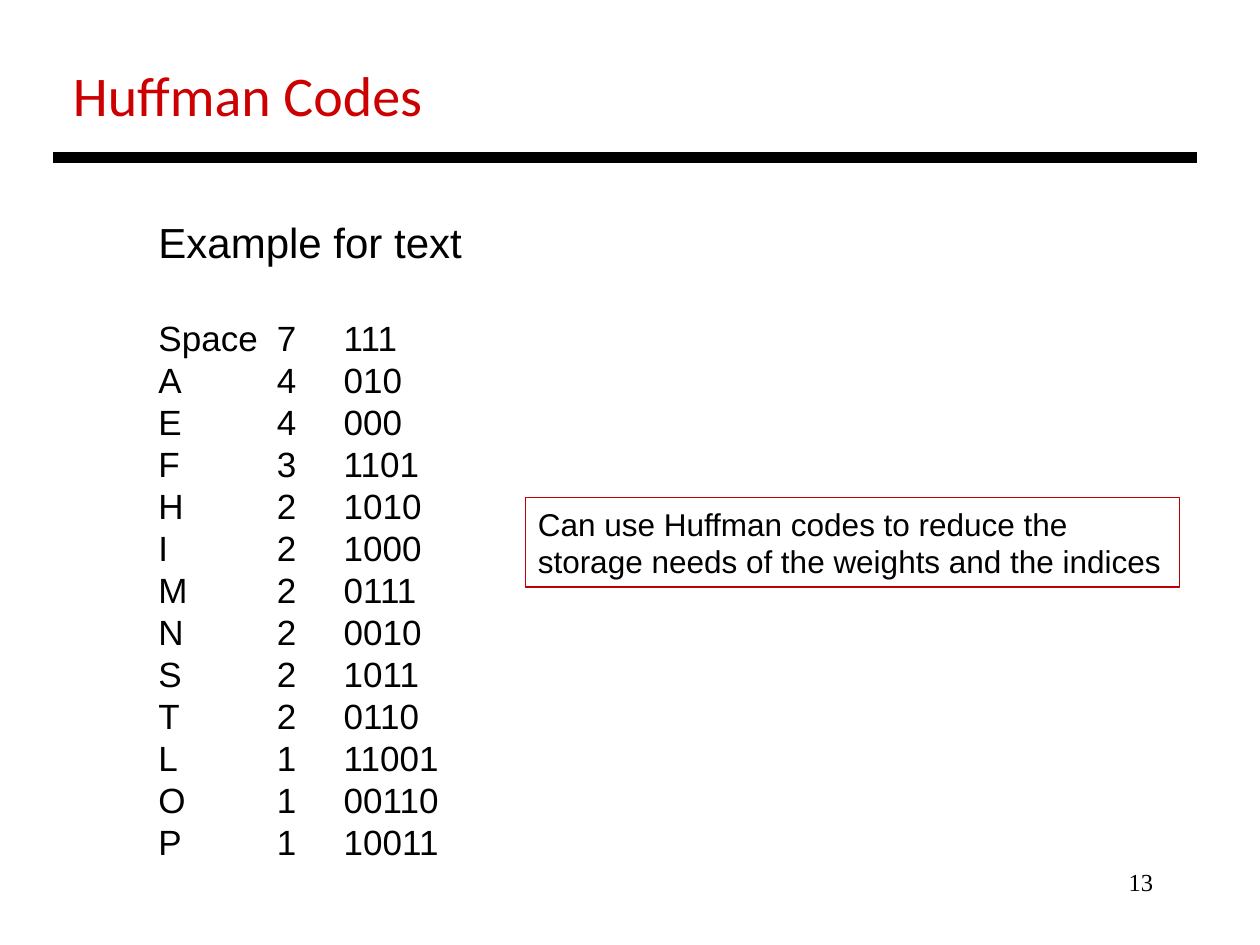
from lxml.etree import SubElement
from pptx import Presentation
from pptx.dml.color import RGBColor
from pptx.enum.shapes import MSO_CONNECTOR as Line, MSO_SHAPE as Shape
from pptx.enum.text import PP_ALIGN as Align
from pptx.oxml.ns import qn
from pptx.util import Inches, Pt

BLACK = RGBColor(0, 0, 0)
RED = RGBColor(0xCC, 0, 0)
DARK_RED = RGBColor(0xC0, 0, 0)

CODES = [
    ("Space", 7, "111"),
    ("A", 4, "010"),
    ("E", 4, "000"),
    ("F", 3, "1101"),
    ("H", 2, "1010"),
    ("I", 2, "1000"),
    ("M", 2, "0111"),
    ("N", 2, "0010"),
    ("S", 2, "1011"),
    ("T", 2, "0110"),
    ("L", 1, "11001"),
    ("O", 1, "00110"),
    ("P", 1, "10011"),
]
STOPS = (0.94, 1.47)


def style(para, text, size, face="Arial", color=BLACK):
    para.text = text
    para.font.size = Pt(size)
    para.font.name = face
    para.font.color.rgb = color


def add_box(left, top, width, height, wrap=True):
    box = slide.shapes.add_textbox(
        Inches(left), Inches(top), Inches(width), Inches(height))
    box.text_frame.word_wrap = wrap
    return box.text_frame


prs = Presentation()
prs.slide_width, prs.slide_height = Inches(10), Inches(7.5)
slide = prs.slides.add_slide(prs.slide_layouts[6])

# Page number
number = add_box(7.17, 6.83, 2.08, 0.5).paragraphs[0]
style(number, "13", 14, "Times New Roman")
number.alignment = Align.RIGHT

# Title and rule
title = add_box(0.48, 0.43, 3.01, 0.64, wrap=False).paragraphs[0]
style(title, "Huffman Codes", 32, "Calibri", RED)
rule = slide.shapes.add_connector(
    Line.STRAIGHT, Inches(0.42), Inches(1.25), Inches(9.5), Inches(1.25))
rule.line.color.rgb = BLACK
rule.line.width = Pt(6)
SubElement(rule.element.spPr, qn("a:effectLst"))

# Code list: symbol, count and code, aligned on tab stops
codes = add_box(1.16, 1.67, 2.63, 5.28)
head = codes.paragraphs[0]
style(head, "Example for text", 24)
head.space_after = Pt(28)
for symbol, count, code in CODES:
    row = codes.add_paragraph()
    tabs = SubElement(row._p.get_or_add_pPr(), qn("a:tabLst"))
    for stop in STOPS:
        SubElement(tabs, qn("a:tab"), pos=str(Inches(stop)), algn="l")
    style(row, f"{symbol}\t{count}\t{code}", 20)

# Framed remark
note = slide.shapes.add_shape(
    Shape.RECTANGLE, Inches(4.17), Inches(3.95), Inches(5.19), Inches(0.71))
note.shadow.inherit = False
note.fill.background()
note.line.color.rgb = DARK_RED
note.line.width = Pt(0.75)
note.text_frame.word_wrap = True
remark = note.text_frame.paragraphs[0]
style(remark, "Can use Huffman codes to reduce the storage needs "
      "of the weights and the indices", 18)
remark.alignment = Align.LEFT

prs.save("out.pptx")
